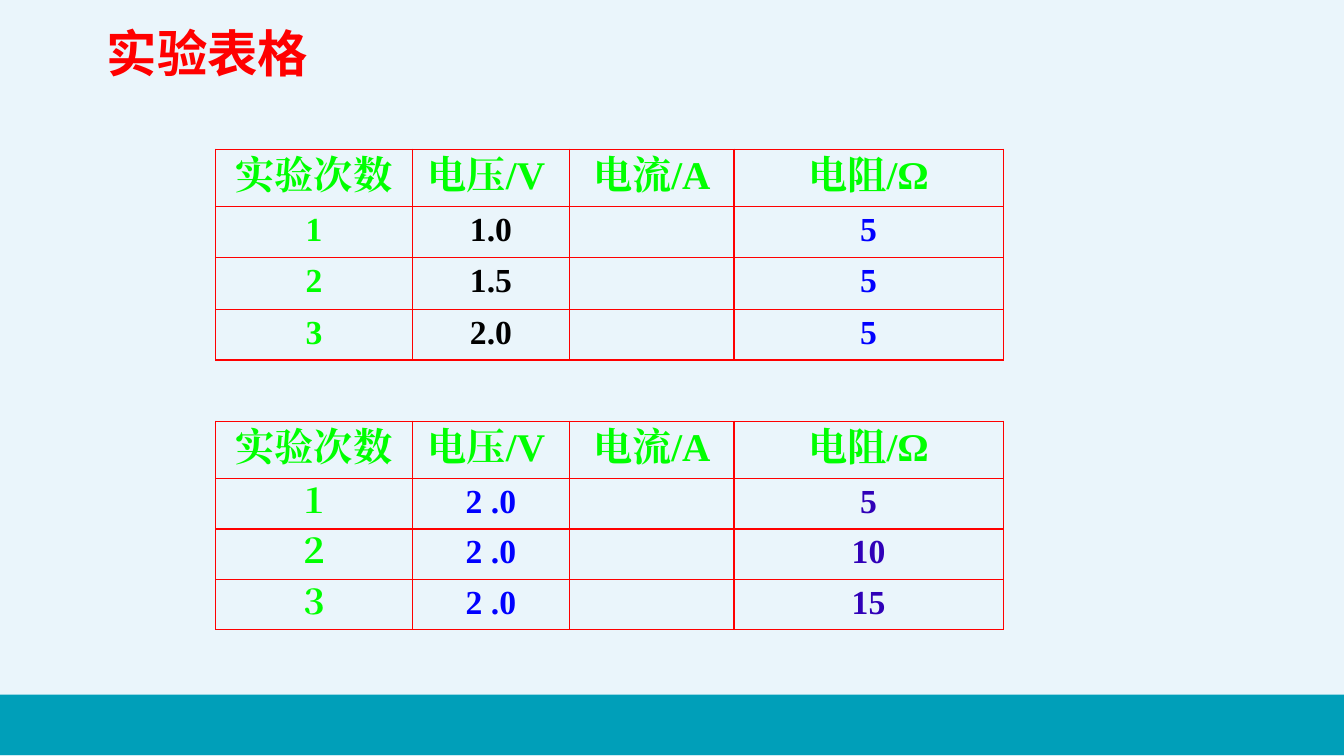
from lxml.etree import SubElement as Sub
from pptx import Presentation as Deck
from pptx.dml.color import RGBColor as Rgb
from pptx.enum.shapes import MSO_SHAPE as Form
from pptx.enum.text import PP_ALIGN as Align
from pptx.oxml.ns import qn
from pptx.util import Inches, Pt

WIDE, HIGH = 13.33, 7.5
RED, GREEN, BLACK = "FF0000", "00FF00", "000000"
BLUE, VIOLET = "0000FF", "3000B8"
PALE, TEAL = "EAF5FB", "009FB9"
HEAD = ["实验次数", "电压/V ", "电流/A", "电阻/Ω"]
COLS = [1.95, 1.56, 1.63, 2.67]


def color(code):
    return Rgb.from_string(code)


class Page:
    sans = "Noto Sans CJK JP"
    serif = "Times New Roman"

    def __init__(self, deck):
        self.slide = deck.slides.add_slide(deck.slide_layouts[6])
        self.shapes = self.slide.shapes

    def place(self, x, y, w, h):
        return [Inches(v) for v in (x * WIDE, y * HIGH, w * WIDE, h * HIGH)]

    def back(self, code):
        fill = self.slide.background.fill
        fill.solid()
        fill.fore_color.rgb = color(code)

    def band(self, x, y, w, h, code):
        shape = self.shapes.add_shape(Form.RECTANGLE, *self.place(x, y, w, h))
        shape.shadow.inherit = False
        shape.fill.solid()
        shape.fill.fore_color.rgb = color(code)
        shape.line.fill.background()

    def style(self, para, face, size, code):
        for run in para.runs:
            font = run.font
            font.name, font.size, font.bold = face, Pt(size), True
            font.color.rgb = color(code)
            Sub(font._element, qn("a:ea"), typeface=face)

    def title(self, x, y, w, h, text):
        frame = self.shapes.add_textbox(*self.place(x, y, w, h)).text_frame
        frame.word_wrap = False
        frame.text = text
        self.style(frame.paragraphs[0], self.sans, 36, RED)

    def border(self, cell):
        props = cell._tc.get_or_add_tcPr()
        for at, side in enumerate(("lnL", "lnR", "lnT", "lnB")):
            line = props.makeelement(qn("a:" + side), {"w": str(Pt(1))})
            props.insert(at, line)
            fill = Sub(line, qn("a:solidFill"))
            Sub(fill, qn("a:srgbClr"), val=RED)

    def table(self, x, y, rows, data, tints):
        size = sum(COLS) / WIDE, sum(rows) / HIGH
        frame = self.shapes.add_table(
            len(rows), len(COLS), *self.place(x, y, *size))
        grid = frame.table
        grid.first_row = grid.horz_banding = False
        for col, width in zip(grid.columns, COLS):
            col.width = Inches(width)
        for row, height in zip(grid.rows, rows):
            row.height = Inches(height)
        for r, line in enumerate([HEAD] + data):
            for c, text in enumerate(line):
                cell = grid.cell(r, c)
                cell.fill.background()
                self.border(cell)
                cell.text_frame.text = text
                para = cell.text_frame.paragraphs[0]
                para.alignment = Align.CENTER
                self.style(para, self.serif, 24 if r else 28,
                           tints[c] if r else GREEN)


def main():
    deck = Deck()
    deck.slide_width, deck.slide_height = Inches(WIDE), Inches(HIGH)
    page = Page(deck)
    page.back(PALE)
    page.band(0, 0.919, 1, 0.08, TEAL)
    page.title(0.072, 0.023, 0.177, 0.095, "实验表格")
    page.table(0.1605, 0.1975, [0.57, 0.5, 0.52, 0.5],
               [["1", "1.0", "", "5"],
                ["2", "1.5", "", "5"],
                ["3", "2.0", "", "5"]],
               [GREEN, BLACK, BLACK, BLUE])
    page.table(0.1605, 0.557, [0.57, 0.5, 0.5, 0.5],
               [["１", "2 .0", "", "5"],
                ["２", "2 .0", "", "10"],
                ["３", "2 .0", "", "15"]],
               [GREEN, BLUE, BLUE, VIOLET])
    deck.save("out.pptx")


if __name__ == "__main__":
    main()
